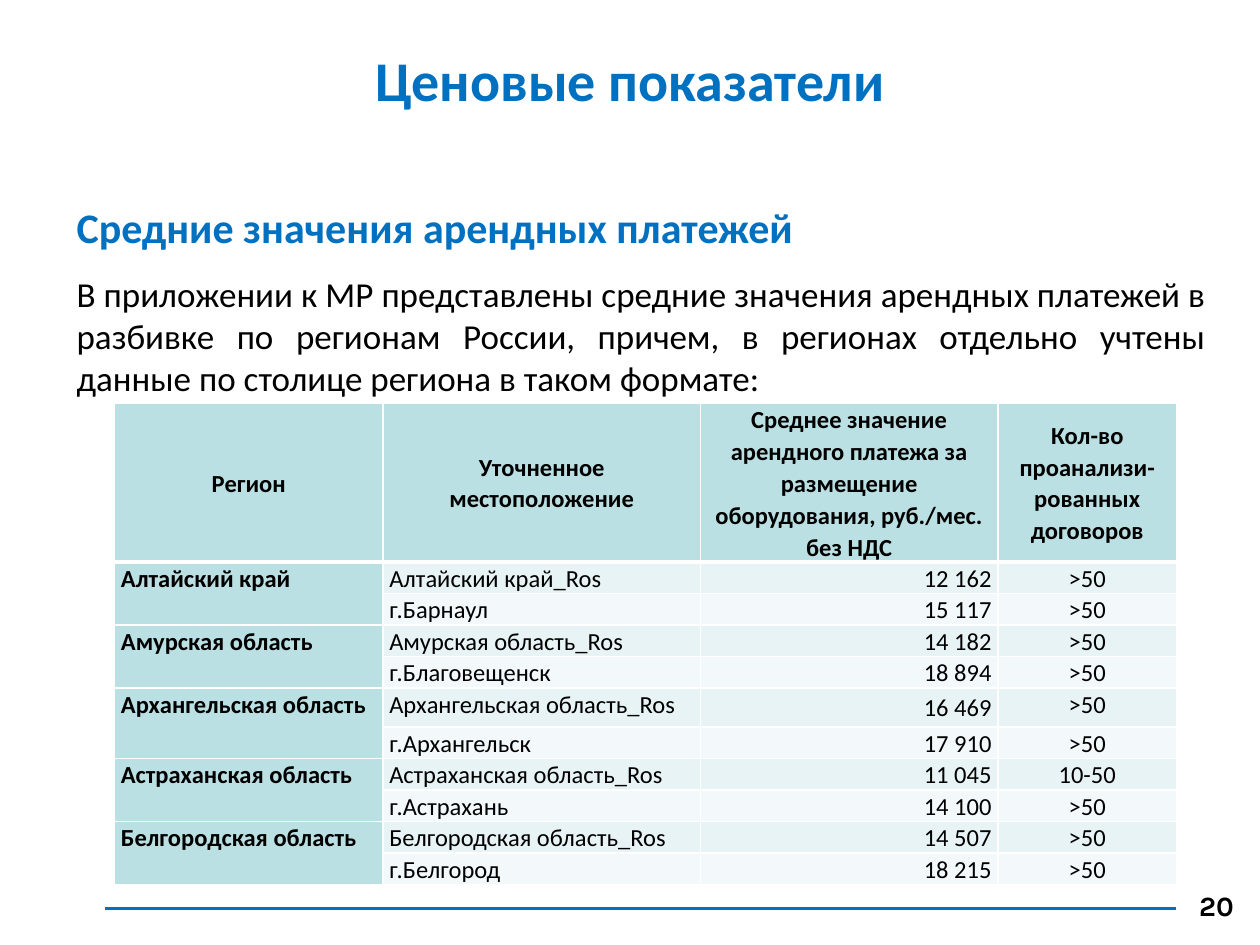
from lxml import etree
from pptx import Presentation, util as u
from pptx.dml.color import RGBColor
from pptx.enum import shapes, text
from pptx.oxml.ns import qn

PX = 9144  # EMU per px, 100 px to the inch
BLUE, TEAL, WHITE = "0070C0", "BBE0E3", "FFFFFF"
BANDS = ("E7F3F4", "F3F9FA")
LEFT, CENTER, RIGHT, JUSTIFY = (
    text.PP_ALIGN.LEFT, text.PP_ALIGN.CENTER, text.PP_ALIGN.RIGHT, text.PP_ALIGN.JUSTIFY)
TOP, MIDDLE = text.MSO_ANCHOR.TOP, text.MSO_ANCHOR.MIDDLE

HEADERS = (
    "Регион",
    "Уточненное местоположение",
    "Среднее значение арендного платежа за размещение оборудования, руб./мес. без НДС",
    "Кол-во проанализи-рованных договоров",
)
# region, its average and contract count, capital, its average and contract count
REGIONS = (
    ("Алтайский край", "12 162", ">50", "г.Барнаул", "15 117", ">50"),
    ("Амурская область", "14 182", ">50", "г.Благовещенск", "18 894", ">50"),
    ("Архангельская область", "16 469", ">50", "г.Архангельск", "17 910", ">50"),
    ("Астраханская область", "11 045", "10-50", "г.Астрахань", "14 100", ">50"),
    ("Белгородская область", "14 507", ">50", "г.Белгород", "18 215", ">50"),
)
COLUMNS = (213, 252, 236, 142)
ROWS = (126, 16, 16, 16, 16, 31, 16, 16, 16, 16, 16)


def px(*lengths):
    return [u.Emu(n * PX) for n in lengths]


def rgb(color):
    return RGBColor.from_string(color)


def write(p, words, size=14, color="000000", bold=False, font="Calibri",
          align=LEFT, before=None, after=None, spacing=None):
    """Fill one paragraph with a formatted run."""
    p.alignment = align
    if before is not None:
        p.space_before = u.Pt(before)
    if after is not None:
        p.space_after = u.Pt(after)
    if spacing is not None:
        p.line_spacing = spacing
    r = p.add_run()
    r.text = words
    r.font.size, r.font.bold, r.font.name = u.Pt(size), bold, font
    r.font.color.rgb = rgb(color)


def add_box(s, box, anchor=TOP):
    tf = s.shapes.add_textbox(*px(*box)).text_frame
    tf.word_wrap = True
    tf.vertical_anchor = anchor
    return tf


def add_title(s, box):
    tf = add_box(s, box, MIDDLE)
    write(tf.paragraphs[0], "Ценовые показатели", size=32, color=BLUE, bold=True, align=CENTER)


def add_intro(s, box):
    tf = add_box(s, box)
    write(tf.paragraphs[0], "Средние значения арендных платежей",
          size=24, color=BLUE, bold=True, align=JUSTIFY)
    write(tf.add_paragraph(),
          "В приложении к МР представлены средние значения арендных платежей в разбивке "
          "по регионам России, причем, в регионах отдельно учтены данные по столице "
          "региона в таком формате:", size=20, align=JUSTIFY, before=12)


def add_footer(s, box):
    """Rule across the left of the box, page number at its right end."""
    x, y, w, h = box
    line = s.shapes.add_connector(shapes.MSO_CONNECTOR.STRAIGHT,
                                  *px(x, y + 21, x + 850, y + 21))
    line.line.color.rgb = rgb(BLUE)
    line.line.width = u.Pt(1.5)
    etree.SubElement(line._element.spPr, qn("a:effectLst"))
    tf = add_box(s, (x + w - 262, y, 262, h))
    write(tf.paragraphs[0], "20", size=16, bold=True, font="Karla", align=RIGHT)


def set_borders(cell, **widths):
    """Draw white borders; widths in points by side: L, R, T, B."""
    tcPr = cell._tc.get_or_add_tcPr()
    for side in "LRTB":
        ln = etree.SubElement(tcPr, qn(f"a:ln{side}"), w=str(u.Pt(widths.get(side, 1))))
        fill = etree.SubElement(ln, qn("a:solidFill"))
        etree.SubElement(fill, qn("a:srgbClr"), val=WHITE)


def format_cell(cell, words, fill, anchor=TOP, align=LEFT, bold=False, **borders):
    set_borders(cell, **borders)
    cell.fill.solid()
    cell.fill.fore_color.rgb = rgb(fill)
    cell.margin_left, cell.margin_top, cell.margin_right, cell.margin_bottom = px(5, 0, 5, 0)
    cell.vertical_anchor = anchor
    if words:
        write(cell.text_frame.paragraphs[0], words, bold=bold, align=align,
              after=8, spacing=1.07)


def add_price_table(s, box):
    table = s.shapes.add_table(len(ROWS), len(COLUMNS), *px(*box)).table
    for column, width in zip(table.columns, px(*COLUMNS)):
        column.width = width
    for row, height in zip(table.rows, px(*ROWS)):
        row.height = height

    for c, words in enumerate(HEADERS):
        format_cell(table.cell(0, c), words, TEAL, MIDDLE, CENTER, bold=True, B=3)

    for i, (region, *values) in enumerate(REGIONS):
        first = 1 + 2 * i
        values.insert(0, f"{region}_Ros")
        for k, band in enumerate(BANDS):
            r = first + k
            top = 3 if r == 1 else 1
            place, price, count = values[3 * k:3 * k + 3]
            format_cell(table.cell(r, 0), "" if k else region, TEAL, bold=True, T=top)
            format_cell(table.cell(r, 1), place, band, T=top)
            format_cell(table.cell(r, 2), price, band, MIDDLE, RIGHT, T=top)
            format_cell(table.cell(r, 3), count, band, align=CENTER, T=top)
        table.cell(first, 0).merge(table.cell(first + 1, 0))


def main():
    prs = Presentation()
    prs.slide_width, prs.slide_height = px(1000, 750)
    s = prs.slides.add_slide(prs.slide_layouts[6])
    add_footer(s, (83, 700, 906, 37))
    add_title(s, (0, 0, 1000, 125))
    add_intro(s, (51, 155, 916, 168))
    add_price_table(s, (91, 320, 843, 371))
    prs.save("out.pptx")


if __name__ == "__main__":
    main()
